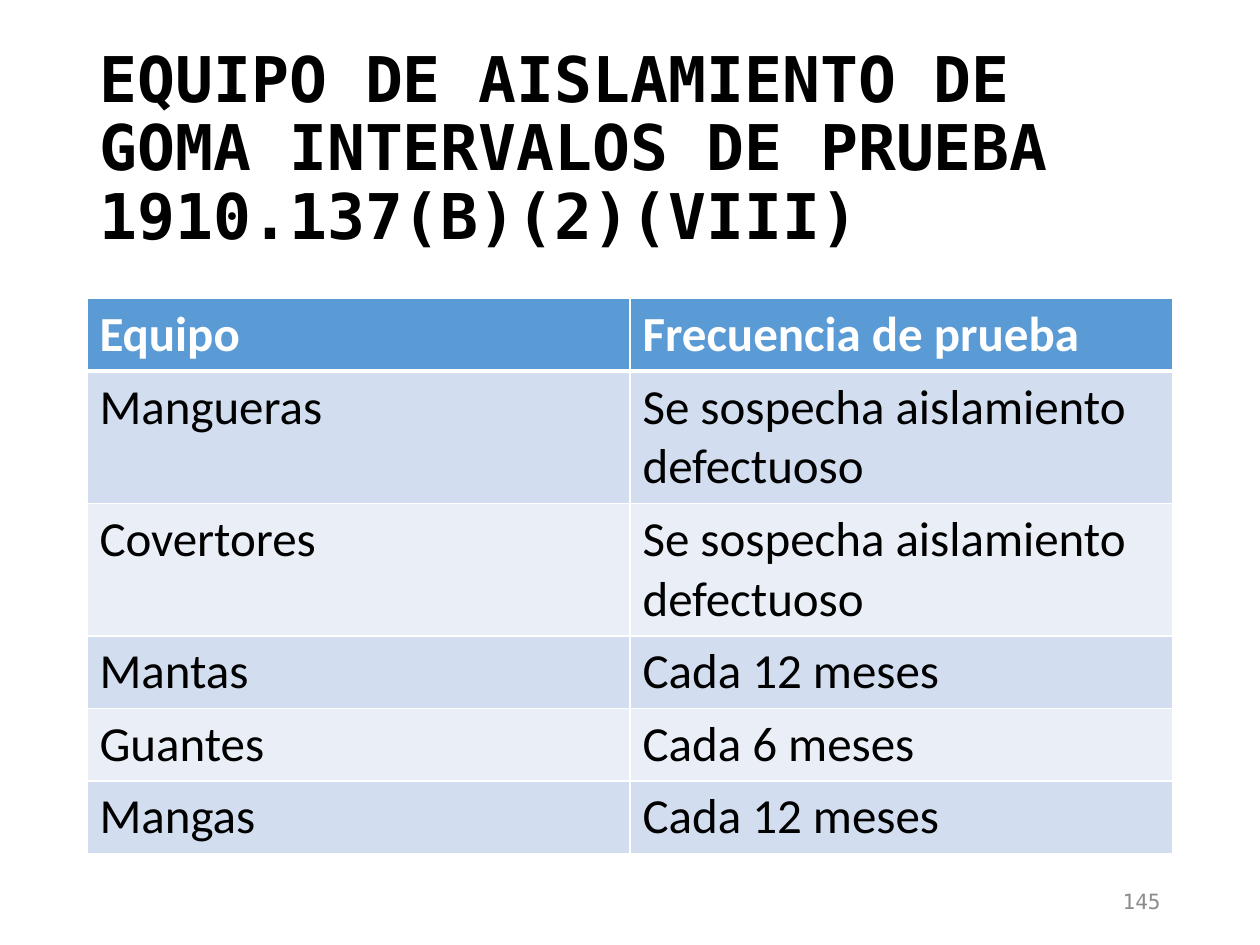
import pptx
import pptx.util
import pptx.dml.color
import pptx.enum.text
import pptx.oxml

Inches = pptx.util.Inches
Pt = pptx.util.Pt
RGBColor = pptx.dml.color.RGBColor
ANCHOR = pptx.enum.text.MSO_ANCHOR
ALIGN = pptx.enum.text.PP_ALIGN

BLACK = RGBColor(0x00, 0x00, 0x00)
WHITE = RGBColor(0xFF, 0xFF, 0xFF)
GRAY = RGBColor(0x8C, 0x8C, 0x8C)
BLUE = RGBColor(0x5B, 0x9B, 0xD5)
DARK = RGBColor(0xD2, 0xDE, 0xEF)
LIGHT = RGBColor(0xEA, 0xEF, 0xF7)
MONO = "DejaVu Sans Mono"
NS = "http://schemas.openxmlformats.org/drawingml/2006/main"


def write(frame, text, size, color, font=MONO, bold=False,
          align=ALIGN.LEFT, anchor=ANCHOR.MIDDLE, space=1.0):
    frame.word_wrap = True
    frame.vertical_anchor = anchor
    para = frame.paragraphs[0]
    para.alignment = align
    para.line_spacing = space
    run = para.add_run()
    run.text = text
    run.font.name = font
    run.font.size = Pt(size)
    run.font.bold = bold
    run.font.color.rgb = color


def edge(cell, side, width):
    cell._tc.get_or_add_tcPr().append(pptx.oxml.parse_xml(
        f'<a:ln{side} xmlns:a="{NS}" w="{Pt(width)}"><a:solidFill>'
        f'<a:srgbClr val="{WHITE}"/></a:solidFill></a:ln{side}>'))


deck = pptx.Presentation()
deck.slide_width = Inches(10)
deck.slide_height = Inches(7.5)
slide = deck.slides.add_slide(deck.slide_layouts[5])

left, width = Inches(0.69), Inches(8.62)

title = slide.shapes.title
title.left, title.top = left, Inches(0.77)
title.width, title.height = width, Inches(0.85)
title.text_frame.auto_size = pptx.enum.text.MSO_AUTO_SIZE.NONE
write(title.text_frame,
      "EQUIPO DE AISLAMIENTO DE GOMA INTERVALOS DE PRUEBA 1910.137(B)(2)(VIII)",
      36, BLACK, bold=True, space=0.9)

rows = [
    ("Equipo", "Frecuencia de prueba"),
    ("Mangueras", "Se sospecha aislamiento defectuoso"),
    ("Covertores", "Se sospecha aislamiento defectuoso"),
    ("Mantas", "Cada 12 meses"),
    ("Guantes", "Cada 6 meses"),
    ("Mangas", "Cada 12 meses"),
]
high = Inches(0.41)
table = slide.shapes.add_table(len(rows), 2, left, Inches(2.37),
                               width, high * len(rows)).table
for r, row in enumerate(rows):
    head = r == 0
    for c, text in enumerate(row):
        cell = table.cell(r, c)
        write(cell.text_frame, text, 28, WHITE if head else BLACK,
              font="Calibri", bold=head, anchor=ANCHOR.TOP)
        for side in "LRTB":
            thick = (r, side) in ((0, "B"), (1, "T"))
            edge(cell, side, 3 if thick else 1)
        cell.fill.solid()
        cell.fill.fore_color.rgb = BLUE if head else DARK if r % 2 else LIGHT

page = slide.shapes.add_textbox(Inches(7.06), Inches(6.95),
                                Inches(2.25), Inches(0.4))
write(page.text_frame, "145", 12, GRAY, align=ALIGN.RIGHT)

deck.save("out.pptx")
